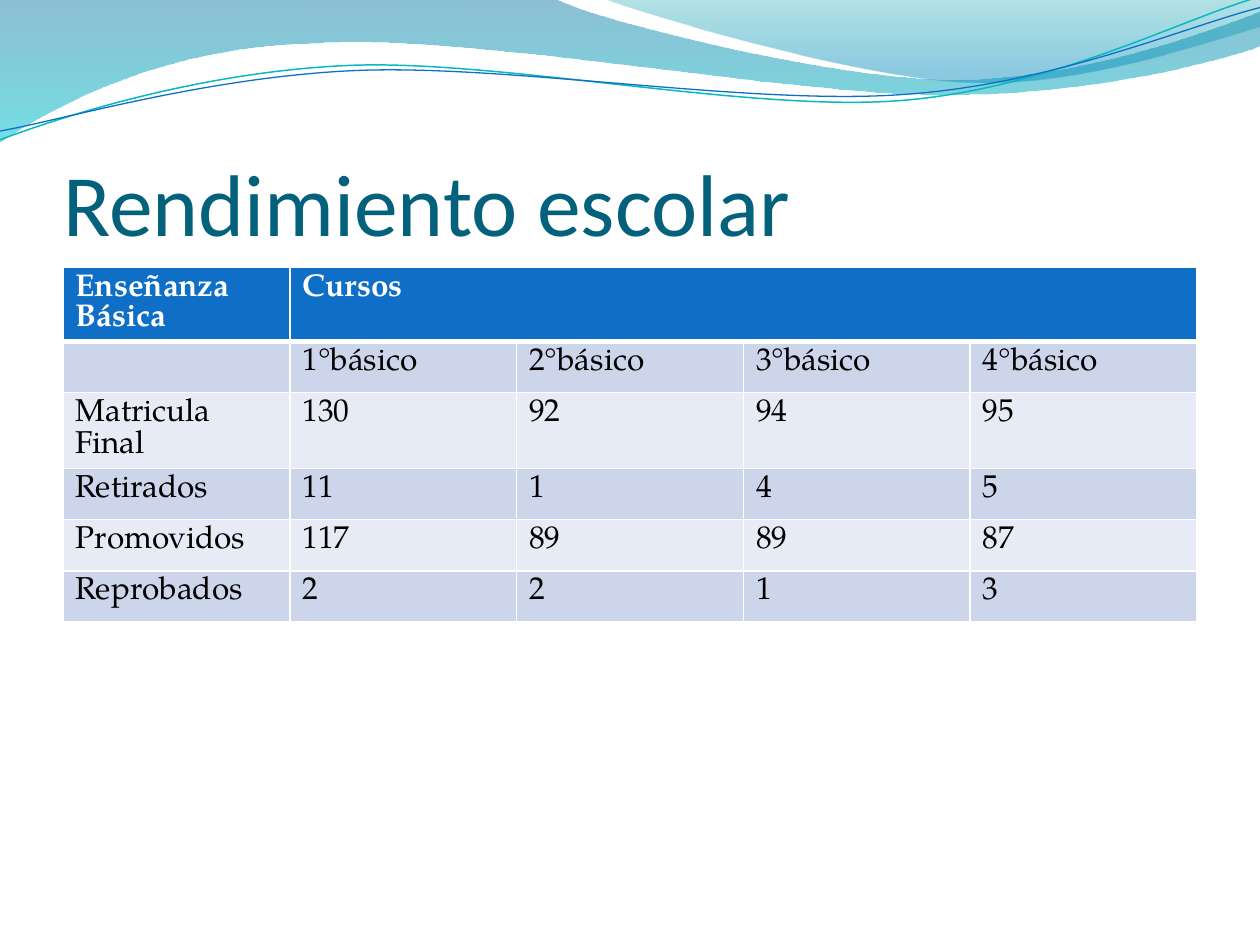
from lxml import etree
from pptx import Presentation
from pptx.dml.color import RGBColor
from pptx.enum.text import MSO_ANCHOR, MSO_AUTO_SIZE, PP_ALIGN
from pptx.oxml.ns import qn
from pptx.util import Inches, Pt

BOTTOM = MSO_ANCHOR.BOTTOM
LEFT = PP_ALIGN.LEFT
NO_FIT = MSO_AUTO_SIZE.NONE

WIDTH, HEIGHT = 10, 7.5
MARGIN = WIDTH * 0.05
CONTENT_WIDTH = WIDTH - 2 * MARGIN
ROW_HEIGHT = Pt(29.2)
TITLE_FONT, BODY_FONT = "Calibri", "TeX Gyre Pagella"

COLORS = {
    "title": "04617B",
    "header": "0F6FC6",
    "band_dark": "CCD5EA",
    "band_light": "E7EBF5",
    "white": "FFFFFF",
    "black": "000000",
    "wave_blue": "0074A1",
    "wave_cyan": "00C6CF",
    "crest_teal": "00A1A9",
    "crest_blue": "008BBF",
    "teal_line": "0AB8BF",
    "blue_line": "0F6FC6",
}

ROWS = [
    ["Enseñanza Básica", "Cursos", "", "", ""],
    ["", "1°básico", "2°básico", "3°básico", "4°básico"],
    ["Matricula Final", "130", "92", "94", "95"],
    ["Retirados", "11", "1", "4", "5"],
    ["Promovidos", "117", "89", "89", "87"],
    ["Reprobados", "2", "2", "1", "3"],
]

WAVE = [
    [(0, 0)],
    [(4.4, -0.01)],
    [(4.76, 0.17), (6.64, 0.63), (7.58, 0.63)],
    [(8.53, 0.63), (9.58, 0.26), (10, 0.09)],
    [(10.01, 0.36)],
    [(9.83, 0.44), (8.7, 0.76), (7.46, 0.75)],
    [(6.22, 0.75), (3.82, 0.28), (2.57, 0.34)],
    [(1.29, 0.36), (0.46, 0.83), (-0.01, 1.13)],
]
CREST = [
    [(4.79, -0.01)],
    [(5.09, 0.11), (6.82, 0.62), (7.69, 0.65)],
    [(8.56, 0.69), (9.61, 0.32), (10, 0.21)],
    [(10, 0)],
]
TEAL_LINE = [
    [(0, 1.11)],
    [(0.48, 0.93), (1.58, 0.57), (2.77, 0.52)],
    [(3.95, 0.47), (5.93, 0.89), (7.13, 0.8)],
    [(8.33, 0.71), (9.38, 0.15), (9.98, -0.02)],
]
BLUE_LINE = [
    [(0, 1.04)],
    [(0.47, 0.96), (1.64, 0.61), (2.83, 0.56)],
    [(4.03, 0.51), (5.97, 0.84), (7.17, 0.75)],
    [(8.36, 0.67), (9.41, 0.21), (10, 0.06)],
]


def rgb(name):
    return RGBColor.from_string(COLORS[name])


def bend_segments(sp, segments):
    steps = iter(list(sp._element.spPr.iter(qn("a:lnTo"))))
    for segment in segments[1:]:
        first, *rest = [next(steps) for _ in segment]
        if rest:
            first.tag = qn("a:cubicBezTo")
        for step in rest:
            first.append(step[0])
            step.getparent().remove(step)


def add_outline(s, segments, close):
    points = [(Inches(x), Inches(y)) for segment in segments for x, y in segment]
    builder = s.shapes.build_freeform(*points[0])
    builder.add_line_segments(points[1:], close=close)
    sp = builder.convert_to_shape()
    bend_segments(sp, segments)
    sp.shadow.inherit = False
    return sp


def add_gradient_area(s, segments, stops):
    sp = add_outline(s, segments, True)
    sp.line.fill.background()
    sp.fill.gradient()
    sp.fill.gradient_angle = 270
    for stop, (position, color, _) in zip(sp.fill.gradient_stops, stops):
        stop.position = position
        stop.color.rgb = rgb(color)
    for clr, (_, _, opacity) in zip(sp._element.spPr.iter(qn("a:srgbClr")), stops):
        etree.SubElement(clr, qn("a:alpha")).set("val", str(opacity * 1000))


def add_curve(s, segments, color, width):
    sp = add_outline(s, segments, False)
    sp.fill.background()
    sp.line.color.rgb = rgb(color)
    sp.line.width = Pt(width)


def format_text(tf, font, size, color, bold=False):
    for p in tf.paragraphs:
        p.alignment = LEFT
        for r in p.runs:
            r.font.name = font
            r.font.size = Pt(size)
            r.font.bold = bold
            r.font.color.rgb = rgb(color)


def set_title(s, text):
    title = s.shapes.title
    title.left, title.top = Inches(MARGIN), Inches(0.77)
    title.width, title.height = Inches(CONTENT_WIDTH), Inches(1.25)
    tf = title.text_frame
    tf.text = text
    tf.auto_size = NO_FIT
    tf.vertical_anchor = BOTTOM
    tf.margin_left = tf.margin_right = tf.margin_bottom = 0
    tf.margin_top = Inches(0.05)
    format_text(tf, TITLE_FONT, 50, "title")


def set_borders(cell, bottom_width):
    tcPr = cell._tc.get_or_add_tcPr()
    widths = {"lnL": 1, "lnR": 1, "lnT": 1, "lnB": bottom_width}
    for index, (side, width) in enumerate(widths.items()):
        ln = etree.Element(qn(f"a:{side}"), w=str(Pt(width)))
        fill = etree.SubElement(ln, qn("a:solidFill"))
        etree.SubElement(fill, qn("a:srgbClr"), val=COLORS["white"])
        tcPr.insert(index, ln)


def add_results_table(s):
    columns = len(ROWS[0])
    table = s.shapes.add_table(
        len(ROWS), columns, Inches(MARGIN), Inches(2.12),
        Inches(CONTENT_WIDTH), ROW_HEIGHT * len(ROWS),
    ).table
    for i, values in enumerate(ROWS):
        header = i == 0
        band = "header" if header else "band_dark" if i % 2 else "band_light"
        for j, value in enumerate(values):
            cell = table.cell(i, j)
            cell.fill.solid()
            cell.fill.fore_color.rgb = rgb(band)
            if header:
                set_borders(cell, 3)
            if value:
                cell.text_frame.text = value
                color = "white" if header else "black"
                format_text(cell.text_frame, BODY_FONT, 18, color, header)
    table.cell(0, 1).merge(table.cell(0, columns - 1))


def main():
    prs = Presentation()
    prs.slide_width, prs.slide_height = Inches(WIDTH), Inches(HEIGHT)
    s = prs.slides.add_slide(prs.slide_layouts[5])
    add_gradient_area(s, WAVE, [(0, "wave_blue", 45), (1, "wave_cyan", 55)])
    add_gradient_area(s, CREST, [(0, "crest_teal", 30), (0.8, "crest_blue", 45)])
    add_curve(s, TEAL_LINE, "teal_line", 0.85)
    add_curve(s, BLUE_LINE, "blue_line", 0.75)
    set_title(s, "Rendimiento escolar")
    add_results_table(s)
    prs.save("out.pptx")


if __name__ == "__main__":
    main()
